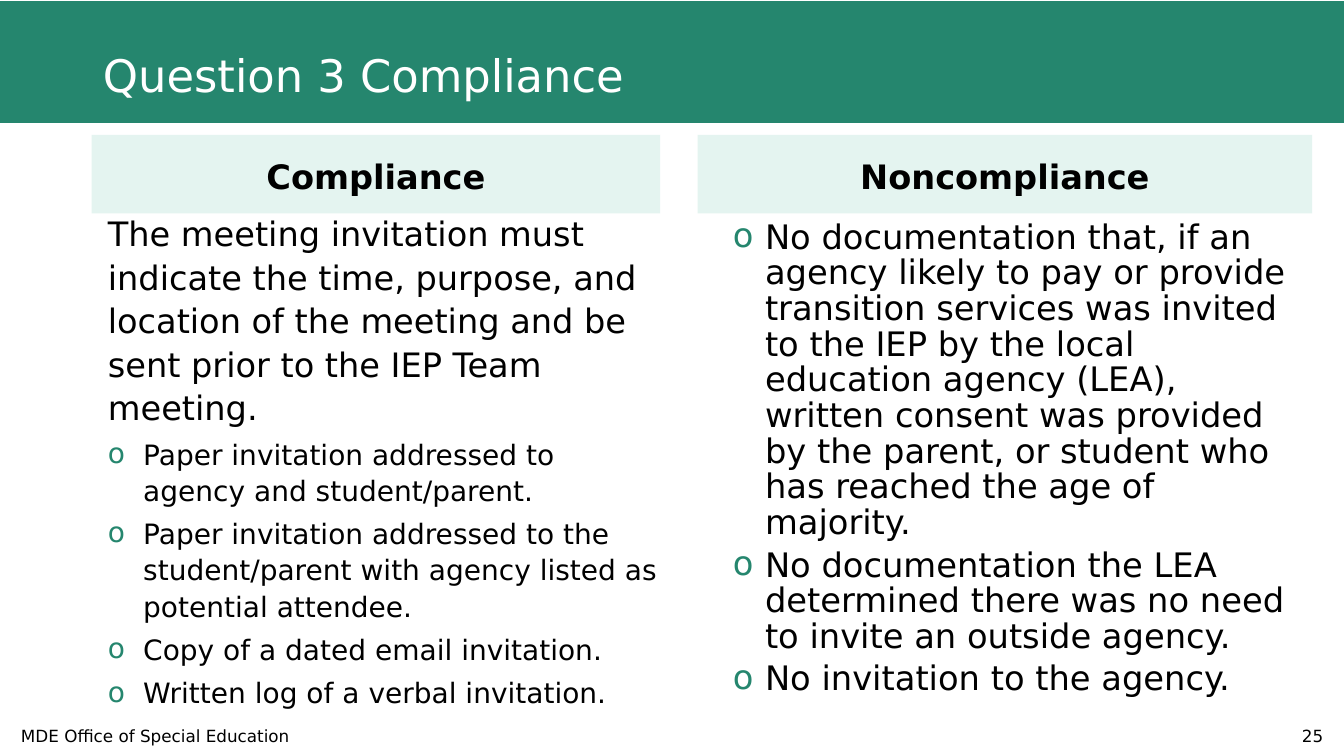
from dataclasses import dataclass

from lxml import etree
from pptx import Presentation
from pptx import util as u
from pptx.dml import color
from pptx.enum import shapes, text
from pptx.oxml import ns

FONT = "DejaVu Sans"
GREEN, MINT, BLACK, WHITE = "25866E", "E4F4F0", "000000", "FFFFFF"
ALIGN = text.PP_ALIGN
MIDDLE = text.MSO_ANCHOR.MIDDLE


@dataclass
class Box:
    left: float
    top: float
    width: float
    height: float

    def lengths(self):
        return [u.Cm(value) for value in (self.left, self.top, self.width, self.height)]


@dataclass
class Style:
    size: float
    spacing: float = 1.0
    margin: float = 0
    hanging: float = 0
    hue: str = BLACK
    bold: bool = False
    align: int = ALIGN.LEFT


def rgb(value):
    return color.RGBColor.from_string(value)


def add_bullet(paragraph):
    properties = paragraph._p.get_or_add_pPr()
    bullet_color = etree.SubElement(properties, ns.qn("a:buClr"))
    etree.SubElement(bullet_color, ns.qn("a:srgbClr"), val=GREEN)
    etree.SubElement(properties, ns.qn("a:buFont"), typeface=FONT)
    etree.SubElement(properties, ns.qn("a:buChar"), char="o")


def format_paragraph(paragraph, style):
    properties = paragraph._p.get_or_add_pPr()
    properties.set("marL", str(u.Cm(style.margin)))
    properties.set("indent", str(u.Cm(-style.hanging)))
    if style.hanging:
        add_bullet(paragraph)
    paragraph.alignment = style.align
    paragraph.line_spacing = style.spacing
    for run in paragraph.runs:
        run.font.name = FONT
        run.font.size = u.Pt(style.size)
        run.font.bold = style.bold
        run.font.color.rgb = rgb(style.hue)


def fill_text(shape, items, anchor):
    frame = shape.text_frame
    frame.word_wrap = True
    frame.auto_size = text.MSO_AUTO_SIZE.NONE
    frame.vertical_anchor = anchor
    frame.text = "\n".join(words for words, style in items)
    for index, (paragraph, (words, style)) in enumerate(zip(frame.paragraphs, items)):
        format_paragraph(paragraph, style)
        if index:
            paragraph.space_before = u.Pt(5)


def add_text(slide, box, items, anchor=text.MSO_ANCHOR.TOP):
    fill_text(slide.shapes.add_textbox(*box.lengths()), items, anchor)


def add_panel(slide, box, fill):
    shape = slide.shapes.add_shape(shapes.MSO_SHAPE.RECTANGLE, *box.lengths())
    shape.shadow.inherit = False
    shape.fill.solid()
    shape.fill.fore_color.rgb = rgb(fill)
    shape.line.fill.background()
    return shape


def add_header(slide, box, words):
    banner = add_panel(slide, box, GREEN)
    title = slide.shapes.title
    title.element.addprevious(banner.element)
    title_box = Box(box.left + 2.34, box.top + 0.79, 29.21, box.height - 0.79)
    title.left, title.top, title.width, title.height = title_box.lengths()
    fill_text(title, [(words, Style(32, 0.9, hue=WHITE))], MIDDLE)


def add_column(slide, box, heading, items, shift=0.0, lift=0.0):
    panel = add_panel(slide, Box(box.left, box.top, box.width, 1.98), MINT)
    heading_style = Style(24, 1.08, bold=True, align=ALIGN.CENTER)
    fill_text(panel, [(heading, heading_style)], MIDDLE)
    top = box.top + 2.04 - lift
    body = Box(box.left - shift, top, 15.49, box.top + box.height - top)
    add_text(slide, body, items)


def add_footer(slide, box, label, number):
    style = Style(12)
    add_text(slide, Box(box.left, box.top, 11.43, box.height), [(label, style)], MIDDLE)
    number_style = Style(12, align=ALIGN.RIGHT)
    number_box = Box(box.left + box.width - 7.62, box.top, 7.62, box.height)
    add_text(slide, number_box, [(number, number_style)], MIDDLE)


def build_slide(presentation):
    slide = presentation.slides.add_slide(presentation.slide_layouts[5])
    add_header(slide, Box(0, 0.03, 33.87, 3.07), "Question 3 Compliance")

    lead = Style(24, 1.08, margin=1.02)
    evidence = Style(20, 1.08, margin=1.91, hanging=0.89)
    compliance = [
        ("The meeting invitation must indicate the time, purpose, and location of "
         "the meeting and be sent prior to the IEP Team meeting.", lead),
        ("Paper invitation addressed to agency and student/parent.", evidence),
        ("Paper invitation addressed to the student/parent with agency listed as "
         "potential attendee.", evidence),
        ("Copy of a dated email invitation.", evidence),
        ("Written log of a verbal invitation.", evidence),
    ]
    add_column(slide, Box(2.31, 3.4, 14.33, 14.63), "Compliance", compliance,
               shift=0.86, lift=0.28)

    finding = Style(24.1, 0.88, margin=1.45, hanging=0.81)
    noncompliance = [
        ("No documentation that, if an agency likely to pay or provide transition "
         "services was invited to the IEP by the local education agency (LEA), "
         "written consent was provided by the parent, or student who has reached "
         "the age of majority.", finding),
        ("No documentation the LEA determined there was no need to invite an "
         "outside agency.", finding),
        ("No invitation to the agency.", finding),
    ]
    add_column(slide, Box(17.58, 3.4, 15.49, 14.38), "Noncompliance", noncompliance)

    add_footer(slide, Box(0.28, 18.03, 33.32, 1.02),
               "MDE Office of Special Education", "25")


def main():
    presentation = Presentation()
    presentation.slide_width = u.Cm(33.87)
    presentation.slide_height = u.Cm(19.05)
    build_slide(presentation)
    presentation.save("out.pptx")


if __name__ == "__main__":
    main()
